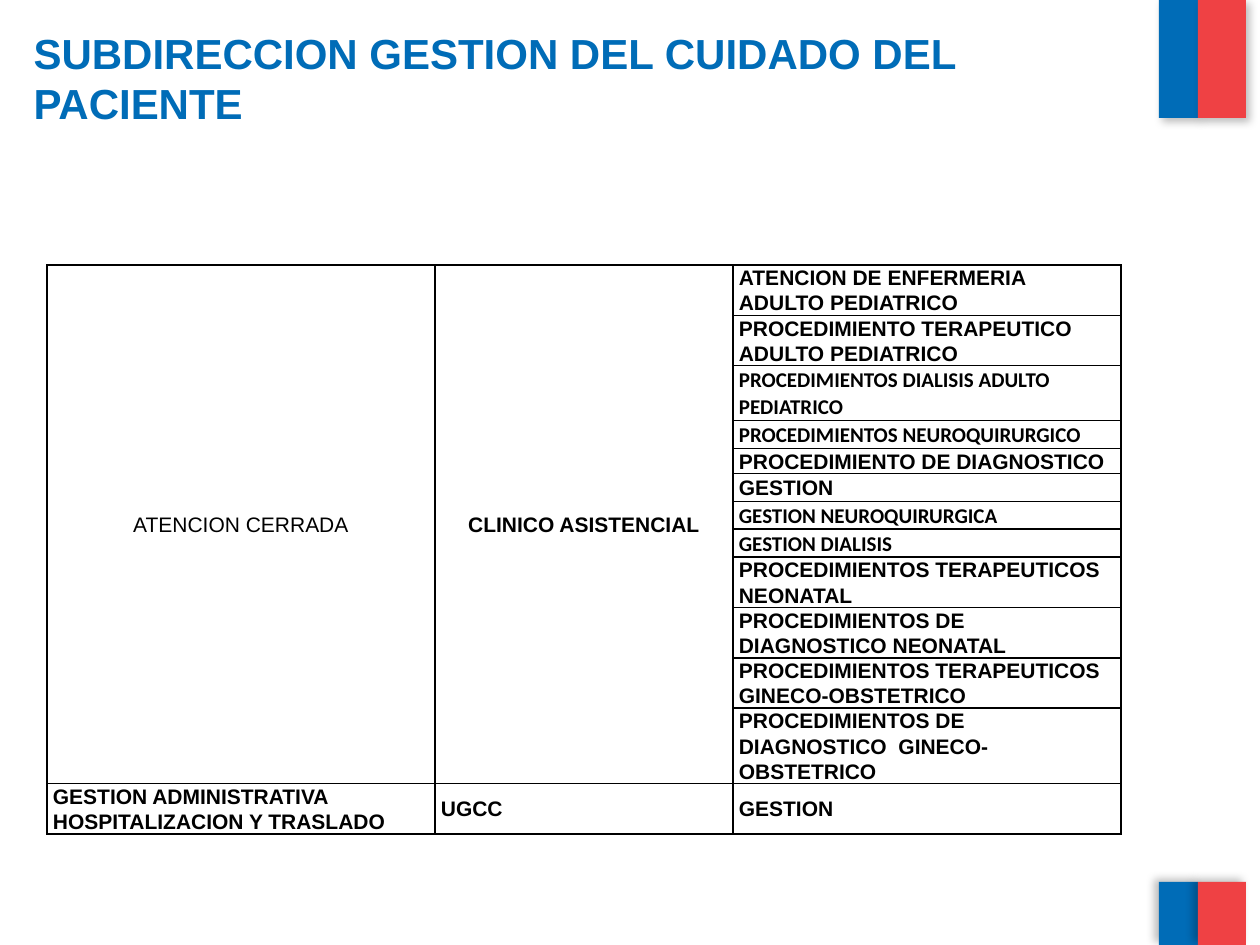
from dataclasses import dataclass

from lxml.etree import SubElement
from pptx import Presentation
from pptx.dml.color import RGBColor as RGB
from pptx.enum.shapes import MSO_SHAPE as Shape
from pptx.enum.text import MSO_ANCHOR as Anchor, PP_ALIGN as Align
from pptx.oxml import parse_xml
from pptx.oxml.ns import nsdecls, qn
from pptx.util import Pt

# Content
TITLE = "SUBDIRECCION GESTION DEL CUIDADO DEL PACIENTE"
AREA, UNIT = "ATENCION CERRADA", "CLINICO ASISTENCIAL"
ARIAL, CALIBRI = "Arial", "Calibri"
SERVICES = [  # text, font, row height in px
    ("ATENCION DE ENFERMERIA ADULTO PEDIATRICO", ARIAL, 26),
    ("PROCEDIMIENTO TERAPEUTICO ADULTO PEDIATRICO", ARIAL, 45),
    ("PROCEDIMIENTOS DIALISIS ADULTO PEDIATRICO", CALIBRI, 26),
    ("PROCEDIMIENTOS NEUROQUIRURGICO", CALIBRI, 28),
    ("PROCEDIMIENTO DE DIAGNOSTICO", ARIAL, 23),
    ("GESTION", ARIAL, 28),
    ("GESTION NEUROQUIRURGICA", CALIBRI, 26),
    ("GESTION DIALISIS", CALIBRI, 28),
    ("PROCEDIMIENTOS TERAPEUTICOS NEONATAL", ARIAL, 28),
    ("PROCEDIMIENTOS DE DIAGNOSTICO NEONATAL", ARIAL, 26),
    ("PROCEDIMIENTOS TERAPEUTICOS GINECO-OBSTETRICO", ARIAL, 45),
    ("PROCEDIMIENTOS DE DIAGNOSTICO  GINECO-OBSTETRICO", ARIAL, 45),
]
ADMIN_ROW = ["GESTION ADMINISTRATIVA HOSPITALIZACION Y TRASLADO", "UGCC", "GESTION"]
ADMIN_HEIGHT = 48
COLUMN_WIDTHS = [388, 298, 388]


@dataclass(frozen=True)
class Theme:
    blue: RGB = RGB.from_string("006CB7")
    red: RGB = RGB.from_string("EF4144")
    black: RGB = RGB.from_string("000000")
    title_size: int = 24
    cell_size: int = 12
    line_spacing: float = 1.07


THEME = Theme()
PX_PER_INCH = 126


def px(length):
    return round(length * 914400 / PX_PER_INCH)


def add_band(slide, box, color, shadow_angle):
    band = slide.shapes.add_shape(Shape.RECTANGLE, *map(px, box))
    band.fill.solid()
    band.fill.fore_color.rgb = color
    band.line.fill.background()
    band.shadow.inherit = False
    effects = band._element.spPr.find(qn("a:effectLst"))
    shadow = SubElement(effects, qn("a:outerShdw"), blurRad=str(Pt(5)), dist=str(Pt(3)),
                        dir=str(shadow_angle * 60000), algn="tl", rotWithShape="0")
    shade = SubElement(shadow, qn("a:srgbClr"), val=str(THEME.black))
    SubElement(shade, qn("a:alpha"), val="25000")


def add_borders(cell):
    properties = cell._tc.get_or_add_tcPr()
    for position, side in enumerate("LRTB"):
        properties.insert(position, parse_xml(
            f'<a:ln{side} {nsdecls("a")} w="{Pt(1)}"><a:solidFill>'
            f'<a:srgbClr val="{THEME.black}"/></a:solidFill></a:ln{side}>'))


def format_cell(cell, text, font=ARIAL, bold=True, align=Align.LEFT):
    cell.text = text
    cell.vertical_anchor = Anchor.MIDDLE
    cell.margin_left = cell.margin_right = px(6)
    cell.margin_top = cell.margin_bottom = 0
    cell.fill.background()
    add_borders(cell)
    paragraph = cell.text_frame.paragraphs[0]
    paragraph.alignment = align
    paragraph.line_spacing = THEME.line_spacing
    paragraph.font.name, paragraph.font.bold = font, bold
    paragraph.font.size = Pt(THEME.cell_size)
    paragraph.font.color.rgb = THEME.black


presentation = Presentation()
presentation.slide_width, presentation.slide_height = px(1260), px(945)
slide = presentation.slides.add_slide(presentation.slide_layouts[5])

# Two-colour bands in the right corners
for top, height, angle in [(0, 118, 45), (882, 63, 215)]:
    add_band(slide, (1159, top, 39, height), THEME.blue, angle)
    add_band(slide, (1198, top, 48, height), THEME.red, angle)

# Title
title = slide.shapes.title
title.left, title.top, title.width, title.height = map(px, (21, 21, 1125, 158))
title.text = TITLE
title.text_frame.vertical_anchor = Anchor.TOP
heading = title.text_frame.paragraphs[0]
heading.alignment = Align.LEFT
heading.font.name, heading.font.bold = ARIAL, True
heading.font.size = Pt(THEME.title_size)
heading.font.color.rgb = THEME.blue

# Table of areas, units and services
heights = [height for _, _, height in SERVICES] + [ADMIN_HEIGHT]
table = slide.shapes.add_table(len(heights), len(COLUMN_WIDTHS), px(47), px(265),
                               px(sum(COLUMN_WIDTHS)), px(595)).table
table.first_row = table.horz_banding = False
for column, width in zip(table.columns, COLUMN_WIDTHS):
    column.width = px(width)
for row, height in zip(table.rows, heights):
    row.height = px(height)

for number, (service, font, _) in enumerate(SERVICES):
    area, unit = (AREA, UNIT) if number == 0 else ("", "")
    format_cell(table.cell(number, 0), area, bold=False, align=Align.CENTER)
    format_cell(table.cell(number, 1), unit, align=Align.CENTER)
    format_cell(table.cell(number, 2), service, font)
for number, text in enumerate(ADMIN_ROW):
    format_cell(table.cell(len(SERVICES), number), text)
for number in (0, 1):
    table.cell(0, number).merge(table.cell(len(SERVICES) - 1, number))

presentation.save("out.pptx")
